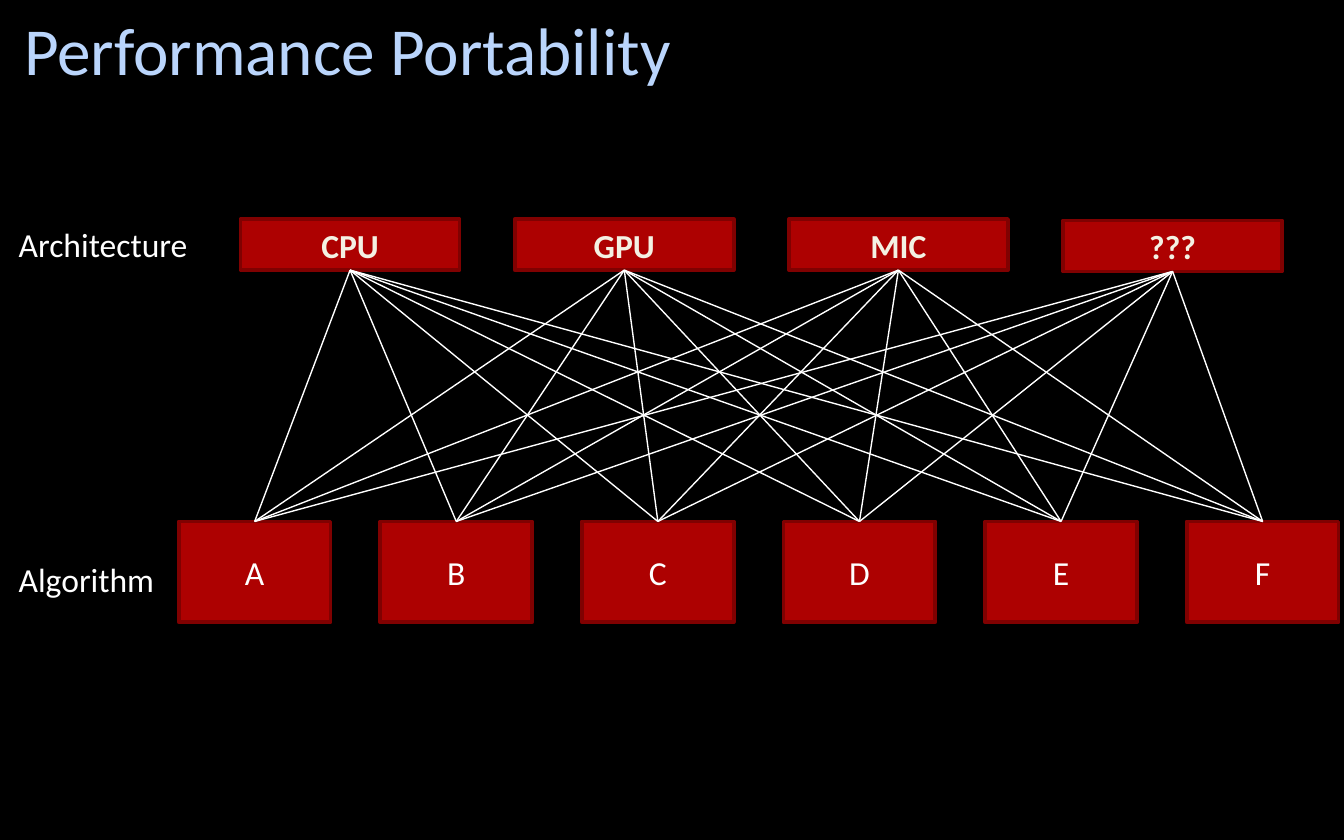
from pptx import Presentation
from pptx.dml.color import RGBColor
from pptx.enum.shapes import MSO_CONNECTOR as Connector, MSO_SHAPE as Shape
from pptx.enum.text import MSO_ANCHOR as Anchor, PP_ALIGN as Align
from pptx.oxml.ns import qn
from pptx.util import Inches, Pt
from lxml.etree import SubElement

BLACK = RGBColor(0x00, 0x00, 0x00)
WHITE = RGBColor(0xFF, 0xFF, 0xFF)
SKY = RGBColor(0xBA, 0xD5, 0xFC)
CREAM = RGBColor(0xF4, 0xF1, 0xE3)
RED = RGBColor(0xAD, 0x01, 0x01)
DARK_RED = RGBColor(0x80, 0x01, 0x01)

TOP, BOTTOM = 0, 2  # connection sites of a rectangle


class Diagram:
    font = "Calibri"
    body_size = 18
    title_size = 36

    def __init__(self, page):
        self.page = page
        page.background.fill.solid()
        page.background.fill.fore_color.rgb = BLACK

    def set_text(self, box, text, size, color, bold=False, align=Align.LEFT,
                 anchor=Anchor.MIDDLE):
        frame = box.text_frame
        frame.text = text
        frame.word_wrap = True
        frame.vertical_anchor = anchor
        para = frame.paragraphs[0]
        para.alignment = align
        font = para.runs[0].font
        font.name, font.size, font.bold = self.font, Pt(size), bold
        font.color.rgb = color

    def title(self, text, left, top, width, height):
        box = self.page.shapes.title
        box.left, box.top = Inches(left), Inches(top)
        box.width, box.height = Inches(width), Inches(height)
        self.set_text(box, text, self.title_size, SKY)

    def label(self, text, left, top, width, height):
        box = self.page.shapes.add_textbox(
            Inches(left), Inches(top), Inches(width), Inches(height))
        self.set_text(box, text, self.body_size, WHITE, anchor=Anchor.TOP)

    def block(self, text, left, top, width, height, color, bold=False):
        box = self.page.shapes.add_shape(
            Shape.RECTANGLE, Inches(left), Inches(top), Inches(width), Inches(height))
        box.shadow.inherit = False
        box.fill.solid()
        box.fill.fore_color.rgb = RED
        box.line.color.rgb = DARK_RED
        box.line.width = Pt(2)
        self.set_text(box, text, self.body_size, color, bold, Align.CENTER)
        return box

    def link(self, upper, lower):
        line = self.page.shapes.add_connector(Connector.STRAIGHT, 0, 0, 0, 0)
        line.begin_connect(upper, BOTTOM)
        line.end_connect(lower, TOP)
        line.line.color.rgb = WHITE
        line.line.width = Pt(0.75)
        SubElement(line._element.spPr, qn("a:effectLst"))


def main():
    deck = Presentation()
    deck.slide_width, deck.slide_height = Inches(10), Inches(6.25)
    diagram = Diagram(deck.slides.add_slide(deck.slide_layouts[5]))
    diagram.title("Performance Portability", 0.08, 0, 8.83, 0.72)

    # Architectures; the unknown one sits slightly lower
    names = ["CPU", "GPU", "MIC", "???"]
    architectures = [
        diagram.block(name, 1.79 + 2.04 * i, 1.64 if name == "???" else 1.63,
                      1.63, 0.38, CREAM, bold=True)
        for i, name in enumerate(names)]

    # Algorithms
    algorithms = [
        diagram.block(name, 1.33 + 1.5 * i, 3.88, 1.13, 0.75, WHITE)
        for i, name in enumerate("ABCDEF")]

    # Every architecture is linked to every algorithm
    for architecture in architectures:
        for algorithm in algorithms:
            diagram.link(architecture, algorithm)

    # Row labels
    diagram.label("Architecture", 0.04, 1.62, 1.75, 0.4)
    diagram.label("Algorithm", 0.04, 4.11, 1.58, 0.4)

    deck.save("out.pptx")


if __name__ == "__main__":
    main()
